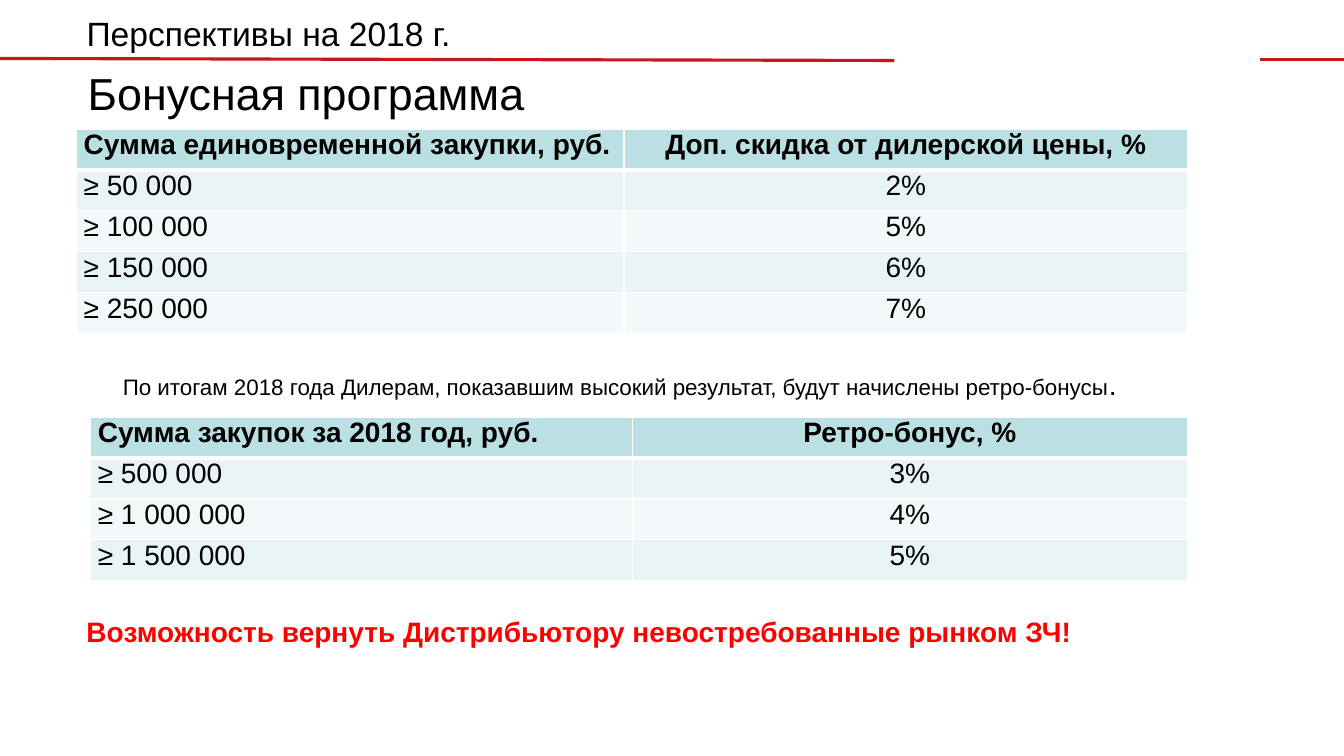
from lxml import etree
from pptx import Presentation
from pptx.dml.color import RGBColor
from pptx.enum.shapes import MSO_CONNECTOR
from pptx.enum.text import MSO_ANCHOR, MSO_AUTO_SIZE, PP_ALIGN
from pptx.oxml.ns import qn
from pptx.util import Inches, Pt

STRAIGHT = MSO_CONNECTOR.STRAIGHT
TOP = MSO_ANCHOR.TOP
GROW = MSO_AUTO_SIZE.SHAPE_TO_FIT_TEXT
LEFT, CENTER = PP_ALIGN.LEFT, PP_ALIGN.CENTER
TITLE_ONLY = 5

FONT = "Arial"
BLACK, WHITE, RED, RULE_RED = "000000", "FFFFFF", "FF0000", "C6171B"
HEADER_FILL, BAND_FILLS = "BBE0E3", ("E7F3F4", "F3F9FA")

DISCOUNTS = [
    ("Сумма единовременной закупки, руб.", "Доп. скидка от дилерской цены, %"),
    ("≥ 50 000", "2%"),
    ("≥ 100 000", "5%"),
    ("≥ 150 000", "6%"),
    ("≥ 250 000", "7%"),
]
RETRO_BONUSES = [
    ("Сумма закупок за 2018 год, руб.", "Ретро-бонус, %"),
    ("≥ 500 000", "3%"),
    ("≥ 1 000 000", "4%"),
    ("≥ 1 500 000", "5%"),
]


def rgb(value):
    return RGBColor.from_string(value)


def add_run(p, text, size, color=BLACK, bold=False):
    r = p.add_run()
    r.text = text
    r.font.name = FONT
    r.font.size = Pt(size)
    r.font.bold = bold
    r.font.color.rgb = rgb(color)


def fill_text(sp, box, runs, wrap=True):
    """Place a text shape and write its runs, each (text, size, ...)."""
    sp.left, sp.top, sp.width, sp.height = map(Inches, box)
    tf = sp.text_frame
    tf.word_wrap = wrap
    tf.auto_size = GROW
    tf.vertical_anchor = TOP
    p = tf.paragraphs[0]
    p.alignment = LEFT
    for run in runs:
        add_run(p, *run)


def add_text(slide, box, runs, wrap=True):
    fill_text(slide.shapes.add_textbox(*map(Inches, box)), box, runs, wrap)


def add_rule(slide, x1, y1, x2, y2):
    line = slide.shapes.add_connector(STRAIGHT, *map(Inches, (x1, y1, x2, y2)))
    line.line.color.rgb = rgb(RULE_RED)
    line.line.width = Pt(2.25)
    etree.SubElement(line._element.spPr, qn("a:effectLst"))


def set_borders(cell, **widths):
    tcPr = cell._tc.get_or_add_tcPr()
    for side in "LRTB":
        ln = etree.SubElement(tcPr, qn(f"a:ln{side}"), w=str(Pt(widths.get(side, 1))))
        fill = etree.SubElement(ln, qn("a:solidFill"))
        etree.SubElement(fill, qn("a:srgbClr"), val=WHITE)


def add_bonus_table(slide, box, col_widths, rows):
    frame = slide.shapes.add_table(len(rows), len(col_widths), *map(Inches, box))
    table = frame.table
    for col, width in zip(table.columns, col_widths):
        col.width = Inches(width)
    for i, row in enumerate(rows):
        header = i == 0
        for j, text in enumerate(row):
            cell = table.cell(i, j)
            cell.margin_left = cell.margin_right = Inches(0.07)
            cell.margin_top = cell.margin_bottom = 0
            set_borders(cell, T=3 if i == 1 else 1, B=3 if header else 1)
            cell.fill.solid()
            cell.fill.fore_color.rgb = rgb(HEADER_FILL if header else BAND_FILLS[(i - 1) % 2])
            p = cell.text_frame.paragraphs[0]
            p.alignment = CENTER if j else LEFT
            add_run(p, text, 20, bold=header)


def main():
    prs = Presentation()
    prs.slide_width, prs.slide_height = Inches(13.33), Inches(7.5)
    slide = prs.slides.add_slide(prs.slide_layouts[TITLE_ONLY])

    add_rule(slide, 0, 0.58, 8.87, 0.6)
    add_rule(slide, 12.5, 0.59, 13.33, 0.59)
    add_text(slide, (0.76, 0.08, 3.85, 0.5), [("Перспективы на 2018 г.", 24)], wrap=False)
    fill_text(slide.shapes.title, (0.77, 0.6, 4.57, 0.64), [("Бонусная программа", 32)], wrap=False)

    add_bonus_table(slide, (0.76, 1.28, 11.02, 2.03), (5.43, 5.59), DISCOUNTS)
    add_bonus_table(slide, (0.9, 4.14, 10.88, 1.62), (5.37, 5.51), RETRO_BONUSES)

    add_text(slide, (1.12, 3.6, 11.1, 0.44), [
        ("По итогам 2018 года Дилерам, показавшим высокий результат, "
         "будут начислены ретро-бонусы", 16),
        (".", 20),
    ])
    add_text(slide, (0.76, 6.05, 11.1, 0.44), [
        ("Возможность вернуть Дистрибьютору невостребованные рынком ЗЧ!", 20, RED, True),
    ])
    prs.save("out.pptx")


if __name__ == "__main__":
    main()
